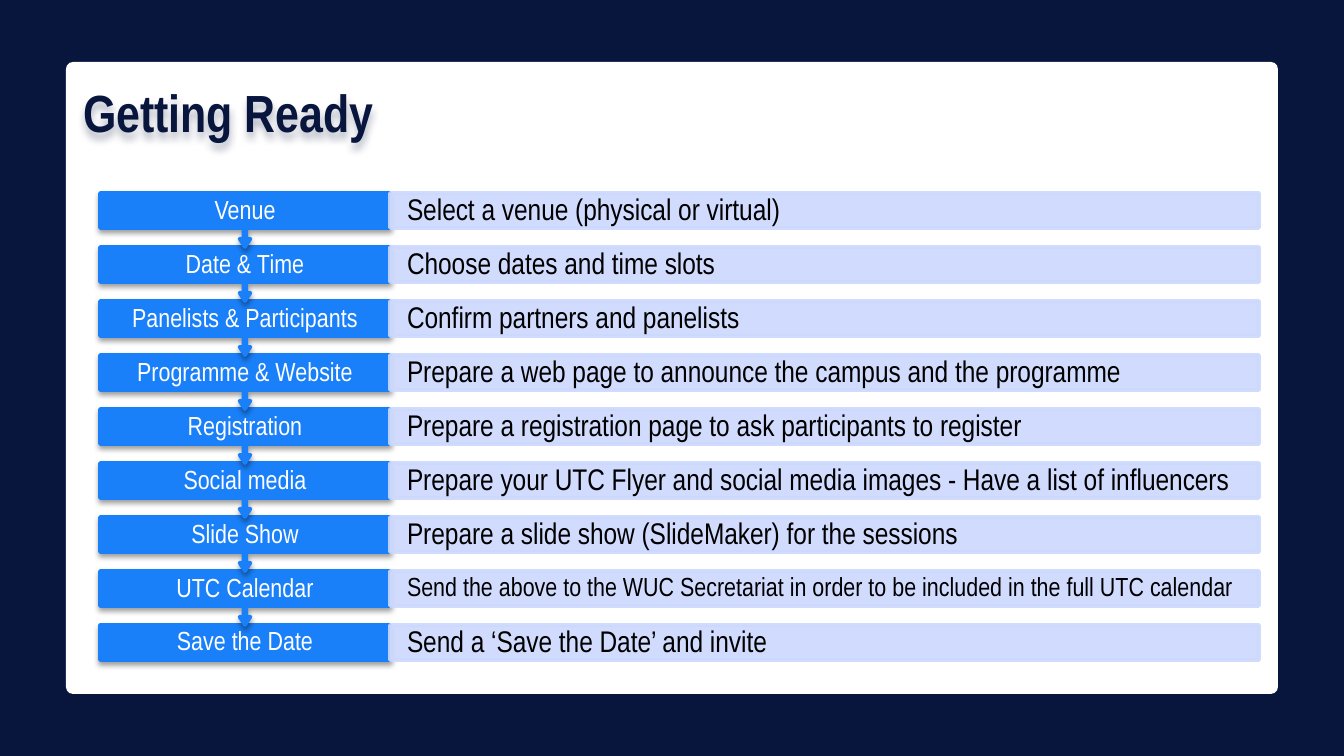
from lxml import etree
from pptx import Presentation
from pptx import util as u
from pptx.dml.color import RGBColor
from pptx.enum import shapes, text
from pptx.oxml.ns import qn

PX = 914400 / 134.4
FONT = "Arial Narrow"
COLORS = {"navy": "08153D", "white": "FFFFFF", "blue": "1A80F9",
          "lavender": "CDD8FD", "black": "000000"}
STEPS = [
    ("Venue", "Select a venue (physical or virtual)", 16),
    ("Date & Time", "Choose dates and time slots", 16),
    ("Panelists & Participants", "Confirm partners and panelists", 16),
    ("Programme & Website",
     "Prepare a web page to announce the campus and the programme", 16),
    ("Registration", "Prepare a registration page to ask participants to register", 16),
    ("Social media",
     "Prepare your UTC Flyer and social media images - Have a list of influencers", 16),
    ("Slide Show", "Prepare a slide show (SlideMaker) for the sessions", 16),
    ("UTC Calendar",
     "Send the above to the WUC Secretariat in order to be included in the full UTC calendar", 14),
    ("Save the Date", "Send a ‘Save the Date’ and invite", 16),
]


def px(value):
    return u.Emu(round(value * PX))


def color(name):
    return RGBColor.from_string(COLORS[name])


def add_shadow(shape, name, alpha, blur, distance):
    """Blurred shadow straight below; blur and distance in points."""
    shape.shadow.inherit = False
    effects = shape._element.spPr.find(qn("a:effectLst"))
    shadow = etree.SubElement(effects, qn("a:outerShdw"), blurRad=str(u.Pt(blur)),
                              dist=str(u.Pt(distance)), dir="5400000",
                              algn="ctr", rotWithShape="0")
    tint = etree.SubElement(shadow, qn("a:srgbClr"), val=COLORS[name])
    etree.SubElement(tint, qn("a:alpha"), val=str(alpha * 1000))


def add_block(slide, kind, box, fill, line_width=0):
    shape = slide.shapes.add_shape(kind, *map(px, box))
    shape.shadow.inherit = False
    shape.fill.solid()
    shape.fill.fore_color.rgb = color(fill)
    if line_width:
        shape.line.color.rgb = color(fill)
        shape.line.width = u.Pt(line_width)
    else:
        shape.line.fill.background()
    return shape


def set_text(shape, words, size, ink, align, inset=0, bold=False):
    frame = shape.text_frame
    frame.word_wrap = True
    frame.vertical_anchor = text.MSO_ANCHOR.MIDDLE
    frame.margin_left = frame.margin_right = px(inset)
    frame.margin_top = frame.margin_bottom = 0
    paragraph = frame.paragraphs[0]
    paragraph.alignment = align
    paragraph.line_spacing = 0.9
    run = paragraph.add_run()
    run.text = words
    run.font.name = FONT
    run.font.size = u.Pt(size)
    run.font.bold = bold
    run.font.color.rgb = color(ink)


def add_card(slide, box):
    card = add_block(slide, shapes.MSO_SHAPE.ROUNDED_RECTANGLE, box, "white")
    card.adjustments[0] = 0.011
    add_shadow(card, "navy", 50, 16.9, 6)


def add_title(slide, box, words):
    title = slide.shapes.add_textbox(*map(px, box))
    title.fill.background()
    set_text(title, words, 28, "navy", text.PP_ALIGN.LEFT, bold=True)
    add_shadow(title, "navy", 30, 4, 3)


def add_step(slide, box, step, is_last):
    """One row: a label, with an arrow to the next row, and its detail."""
    left, top, width, height = box
    label_width, callout_height = 290, 54
    label, detail, detail_size = step

    # Label
    if is_last:
        block = add_block(slide, shapes.MSO_SHAPE.RECTANGLE,
                          (left, top, label_width, height), "blue", 2)
    else:
        block = add_block(slide, shapes.MSO_SHAPE.DOWN_ARROW_CALLOUT,
                          (left, top, label_width, callout_height), "blue", 2)
        for index, value in enumerate((0.05, 0.1, 0.15, 0.65)):
            block.adjustments[index] = value
    add_shadow(block, "black", 38, 3.1, 1.6)
    set_text(block, label, 14, "white", text.PP_ALIGN.CENTER, 20)

    # Detail
    strip = add_block(slide, shapes.MSO_SHAPE.RECTANGLE,
                      (left + label_width, top, width - label_width, height),
                      "lavender", 2)
    for tint in strip._element.spPr.iter(qn("a:srgbClr")):
        etree.SubElement(tint, qn("a:alpha"), val="90000")
    set_text(strip, detail, detail_size, "black", text.PP_ALIGN.LEFT, 17)


def add_steps(slide, box):
    left, top, width, _ = box
    pitch, height = 54, 35
    # Bottom row first, so that each arrow lies over the row below it
    for index, step in reversed(list(enumerate(STEPS))):
        add_step(slide, (left, top + index * pitch, width, height), step,
                 index == len(STEPS) - 1)


def main():
    presentation = Presentation()
    presentation.slide_width, presentation.slide_height = px(1344), px(756)
    slide = presentation.slides.add_slide(presentation.slide_layouts[6])
    slide.background.fill.solid()
    slide.background.fill.fore_color.rgb = color("navy")

    add_card(slide, (66, 62, 1212, 632))
    add_steps(slide, (100, 193, 1159, 467))
    add_title(slide, (83, 87, 945, 58), "Getting Ready")
    presentation.save("out.pptx")


if __name__ == "__main__":
    main()
